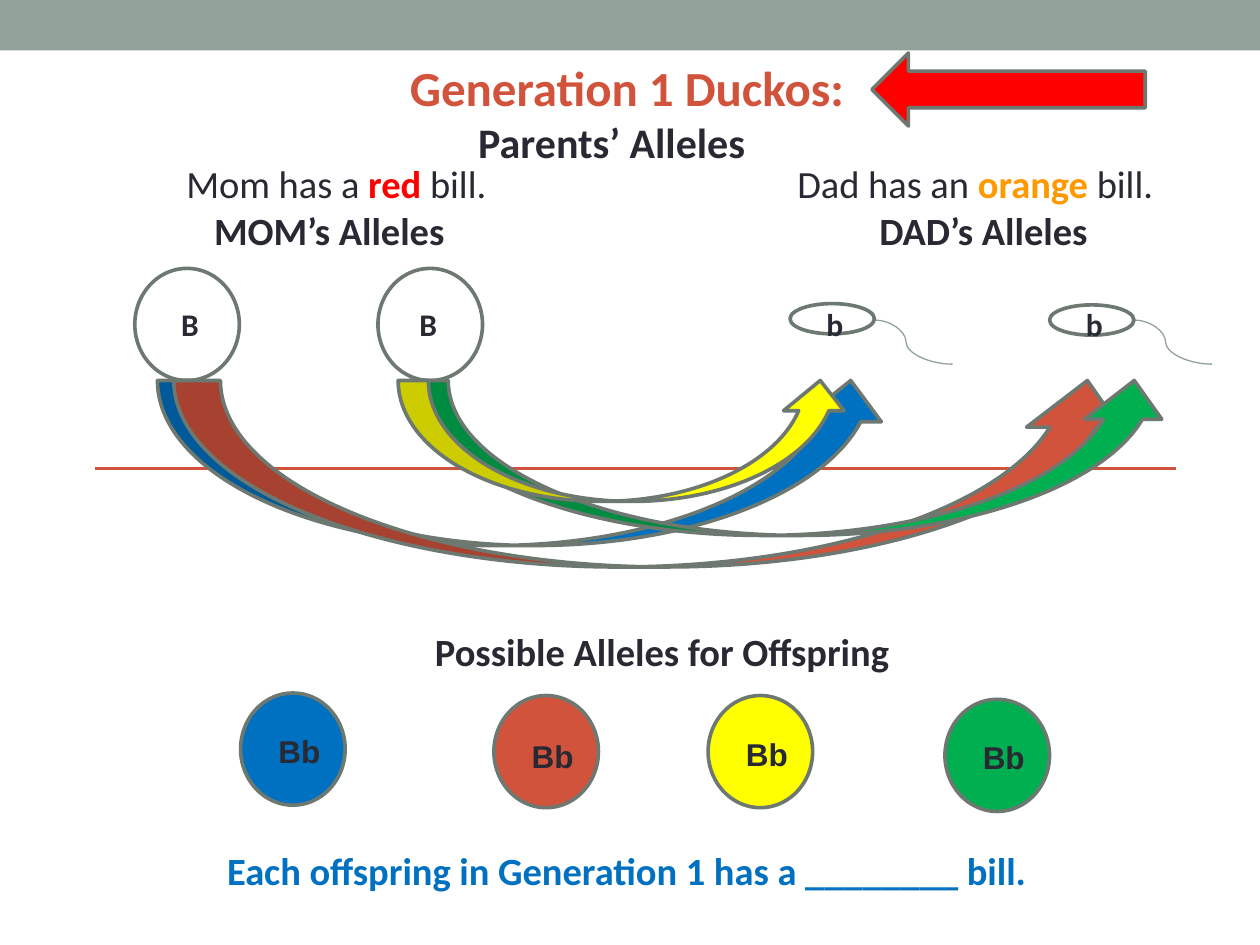
from lxml.etree import SubElement
from pptx import Presentation
from pptx.dml.color import RGBColor
from pptx.enum.shapes import MSO_CONNECTOR as LINK, MSO_SHAPE as FORM
from pptx.enum.text import MSO_ANCHOR, PP_ALIGN
from pptx.oxml.ns import qn
from pptx.util import Inches, Pt

rgb = RGBColor.from_string
DARK, EDGE, SAGE, RUST = "292934", "6D7871", "93A299", "D2533C"
BLUE, GOLD, GREEN, RED = "0070C0", "FFFF00", "00B050", "FF0000"

prs = Presentation()
prs.slide_width, prs.slide_height = Inches(10), Inches(7.5)
slide = prs.slides.add_slide(prs.slide_layouts[5])
shapes = slide.shapes


def draw(form, x, y, w, h, fill=None, edge=EDGE):
    shape = shapes.add_shape(form, Inches(x), Inches(y), Inches(w), Inches(h))
    shape.shadow.inherit = False
    if fill:
        shape.fill.solid()
        shape.fill.fore_color.rgb = rgb(fill)
    else:
        shape.fill.background()
    if edge:
        shape.line.color.rgb = rgb(edge)
        shape.line.width = Pt(2.08)
    else:
        shape.line.fill.background()


def write(box, rows, size, font="Calibri", color=DARK, bold=True, align=PP_ALIGN.LEFT):
    frame = box.text_frame
    frame.word_wrap = True
    frame.vertical_anchor = MSO_ANCHOR.MIDDLE
    for i, (runs, tabs) in enumerate(rows):
        para = frame.paragraphs[0] if i == 0 else frame.add_paragraph()
        para.alignment = align
        if tabs:
            stops = SubElement(para._p.get_or_add_pPr(), qn("a:tabLst"))
            for tab in tabs:
                SubElement(stops, qn("a:tab"), pos=str(Inches(tab)), algn="l")
        para.font.size, para.font.name = Pt(size), font
        para.font.bold, para.font.color.rgb = bold, rgb(color)
        for text, *tint in runs:
            run = para.add_run()
            run.text = text
            if tint:
                run.font.bold = True
                run.font.color.rgb = rgb(tint[0])


draw(FORM.RECTANGLE, 0, 0, 10, 0.4, SAGE, None)

links = [
    (LINK.STRAIGHT, 0.75, 3.72, 9.33, 3.72, RUST, 1.5),
    (LINK.CURVE, 9, 2.54, 9.62, 2.89, SAGE, 0.75),
    (LINK.CURVE, 6.94, 2.54, 7.56, 2.89, SAGE, 0.75),
]
for kind, x1, y1, x2, y2, color, width in links:
    link = shapes.add_connector(kind, Inches(x1), Inches(y1), Inches(x2), Inches(y2))
    link.line.color.rgb = rgb(color)
    link.line.width = Pt(width)
    SubElement(link._element.spPr, qn("a:effectLst"))
    if kind == LINK.CURVE:
        bends = link._element.spPr.find(qn("a:prstGeom")).get_or_add_avLst()
        SubElement(bends, qn("a:gd"), name="adj1", fmla="val 40500")

for x in (1.07, 3):
    draw(FORM.OVAL, x, 2.13, 0.83, 0.89)
for x, y in ((8.33, 2.42), (6.27, 2.41)):
    draw(FORM.OVAL, x, y, 0.67, 0.24)

title = shapes.title
title.left, title.top = Inches(3.13), Inches(0.4)
title.width, title.height = Inches(3.69), Inches(0.98)
write(title, [([("Generation 1 Duckos:",)], ()), ([("Parents’ Alleles",)], ())],
      24, align=PP_ALIGN.CENTER)
head, sub = title.text_frame.paragraphs
head.font.size, head.font.color.rgb = Pt(28), rgb(RUST)
sub._p.get_or_add_pPr().set("marR", str(Inches(0.24)))

bills = [("\tMom has a ",), ("red", RED), (" bill.\tDad has an ",),
         ("orange", "FF9900"), (" bill.",)]
names = [("\tMOM’s Alleles\tDAD’s Alleles", DARK)]
box = shapes.add_textbox(Inches(0.33), Inches(1.22), Inches(9.08), Inches(0.84))
write(box, [(bills, (1.05, 5.9)), (names, (1.27, 6.55))], 22, bold=False)

box = shapes.add_textbox(Inches(1.07), Inches(2.37), Inches(7.93), Inches(0.4))
write(box, [([("\tB\tB\tb\tb",)], (0.27, 2.16, 5.39, 7.45))], 18)

arrows = [
    (1.25, 5.83, 1.31, BLUE),
    (1.38, 7.62, 1.48, RUST),
    (3.25, 6.06, 1.23, GREEN),
    (3.16, 3.59, 0.96, GOLD),
]
for x, w, h, fill in arrows:
    draw(FORM.CURVED_UP_ARROW, x, 3.02, w, h, fill)

box = shapes.add_textbox(Inches(1.02), Inches(4.92), Inches(8.47), Inches(0.5))
write(box, [([("Possible Alleles for Offspring",)], ())], 22, align=PP_ALIGN.CENTER)

young = [
    (1.91, 5.5, 5.76, BLUE),
    (3.92, 5.52, 5.8, RUST),
    (5.62, 5.52, 5.78, GOLD),
    (7.5, 5.55, 5.81, GREEN),
]
for x, y, top, fill in young:
    draw(FORM.OVAL, x, y, 0.83, 0.89, fill)
    box = shapes.add_textbox(Inches(x), Inches(top), Inches(0.83), Inches(0.4))
    box.text_frame.margin_left = Inches(0.3)
    write(box, [([("Bb",)], ())], 18, "Arial")

box = shapes.add_textbox(Inches(1.01), Inches(6.67), Inches(7.93), Inches(0.47))
write(box, [([("Each offspring in Generation 1 has a ________ bill.",)], ())],
      22, color=BLUE, align=PP_ALIGN.CENTER)

draw(FORM.LEFT_ARROW, 6.92, 0.42, 2.17, 0.58, RED)

prs.save("out.pptx")
